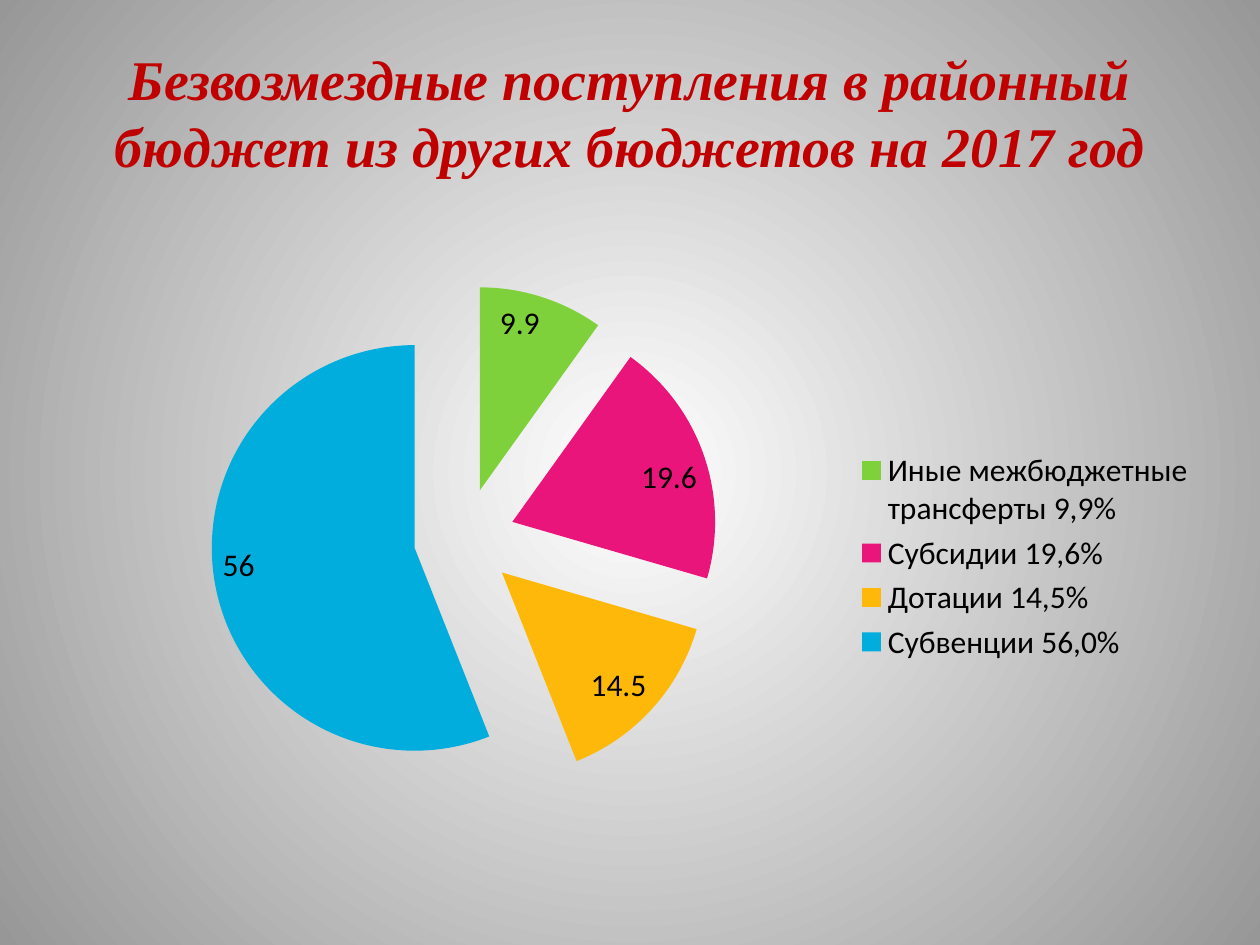
from pptx import Presentation
from pptx.chart.data import CategoryChartData
from pptx.dml.color import RGBColor
from pptx.enum.chart import XL_CHART_TYPE, XL_LABEL_POSITION, XL_LEGEND_POSITION
from pptx.enum.text import MSO_ANCHOR, PP_ALIGN
from pptx.oxml import parse_xml
from pptx.oxml.ns import nsdecls, qn
from pptx.util import Inches, Pt

PIE = XL_CHART_TYPE.PIE
INSIDE_END = XL_LABEL_POSITION.INSIDE_END
RIGHT = XL_LEGEND_POSITION.RIGHT
MIDDLE = MSO_ANCHOR.MIDDLE
CENTER = PP_ALIGN.CENTER

COLORS = {
    "title": "C00000", "text": "000000", "center": "FFFFFF", "edge": "979797",
    "green": "7FD13B", "pink": "EA157A", "amber": "FEB80A", "blue": "00ADDC",
}
TITLE = "Безвозмездные поступления в районный бюджет из других бюджетов на 2017 год"
TRANSFERS = [
    ("Иные межбюджетные трансферты 9,9%", 9.9, "green"),
    ("Субсидии 19,6%", 19.6, "pink"),
    ("Дотации 14,5%", 14.5, "amber"),
    ("Субвенции 56,0%", 56, "blue"),
]
PLOT = {"x": 0.06, "y": 0.065, "w": 0.568, "h": 0.813}
EXPLOSION = 25


def rgb(name):
    return RGBColor.from_string(COLORS[name])


def set_background(s):
    fill = s.background.fill
    fill.gradient()
    for stop, name in zip(fill.gradient_stops, ("center", "edge")):
        stop.color.rgb = rgb(name)
    grad = s.element.find(".//" + qn("a:gradFill"))
    grad.replace(grad.find(qn("a:lin")), parse_xml(
        f'<a:path {nsdecls("a")} path="circle">'
        '<a:fillToRect l="50000" t="50000" r="50000" b="50000"/></a:path>'))


def add_title(s):
    tf = s.shapes.add_textbox(Inches(0.5), Inches(0.3), Inches(9), Inches(1.17)).text_frame
    tf.word_wrap = True
    tf.vertical_anchor = MIDDLE
    p = tf.paragraphs[0]
    p.text = TITLE
    p.alignment = CENTER
    font = p.font
    font.name, font.size = "Times New Roman", Pt(32)
    font.bold = font.italic = True
    font.color.rgb = rgb("title")


def set_plot_layout(chart):
    area = chart._chartSpace.chart.plotArea
    for layout in area.findall(qn("c:layout")):
        area.remove(layout)
    sizes = "".join(f'<c:{k} val="{v}"/>' for k, v in PLOT.items())
    area.insert(0, parse_xml(
        f'<c:layout {nsdecls("c")}><c:manualLayout><c:layoutTarget val="inner"/>'
        f'<c:xMode val="edge"/><c:yMode val="edge"/>{sizes}</c:manualLayout></c:layout>'))


def add_pie(s):
    data = CategoryChartData()
    data.categories = [label for label, _, _ in TRANSFERS]
    data.add_series("Series 1", [value for _, value, _ in TRANSFERS])
    chart = s.shapes.add_chart(
        PIE, Inches(0.59), Inches(1.94), Inches(9), Inches(4.95), data).chart
    chart.has_title = False
    chart.font.name, chart.font.size = "Calibri", Pt(18)
    chart.font.color.rgb = rgb("text")
    chart.has_legend = True
    chart.legend.position = RIGHT
    chart.legend.include_in_layout = False
    set_plot_layout(chart)

    plot = chart.plots[0]
    plot.vary_by_categories = True
    plot.has_data_labels = True
    labels = plot.data_labels
    labels.show_value = True
    labels.show_percentage = False
    labels.position = INSIDE_END

    series = plot.series[0]
    for i, (_, _, color) in enumerate(TRANSFERS):
        fill = series.points[i].format.fill
        fill.solid()
        fill.fore_color.rgb = rgb(color)
    series._element.find(qn("c:dPt")).addprevious(
        parse_xml(f'<c:explosion {nsdecls("c")} val="{EXPLOSION}"/>'))


def main():
    prs = Presentation()
    prs.slide_width, prs.slide_height = Inches(10), Inches(7.5)
    s = prs.slides.add_slide(prs.slide_layouts[6])
    set_background(s)
    add_title(s)
    add_pie(s)
    prs.save("out.pptx")


if __name__ == "__main__":
    main()
